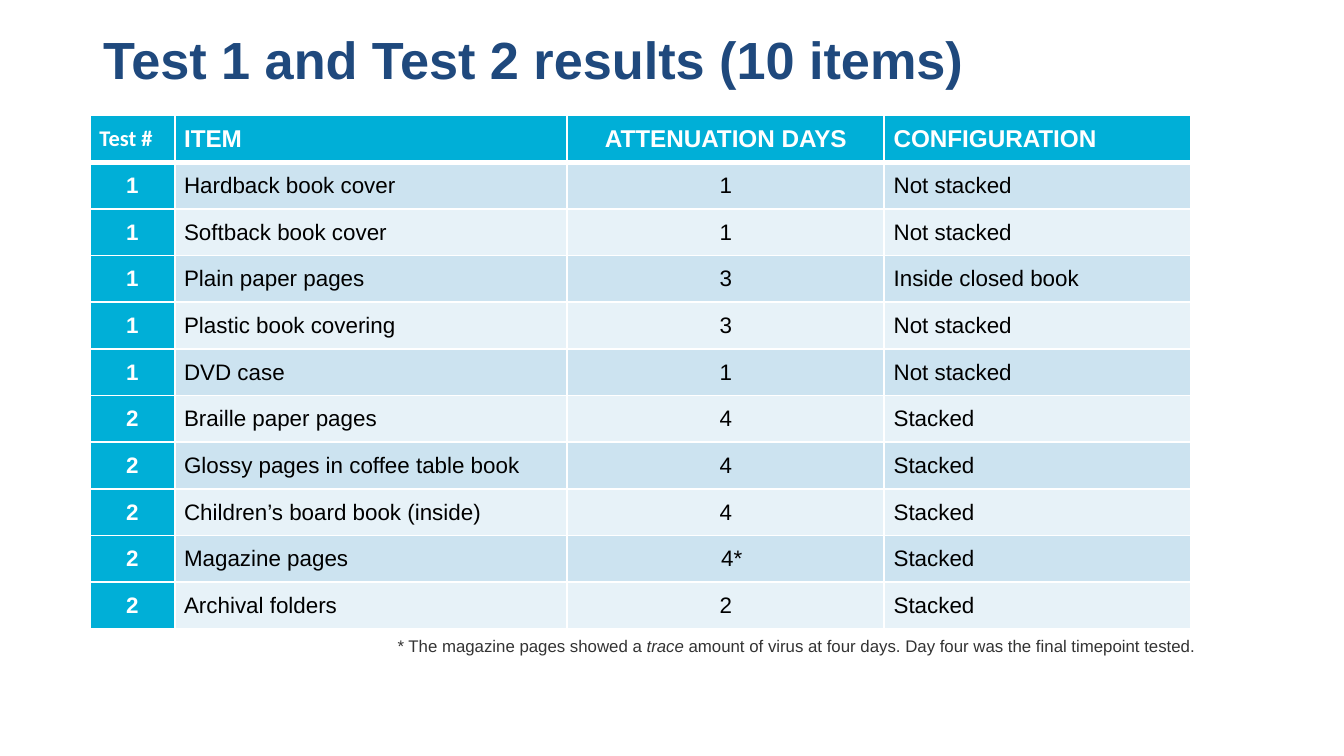
"""Build a slide with a table of virus attenuation results for ten library items."""
from lxml.etree import SubElement
from pptx import Presentation
from pptx.dml.color import RGBColor
from pptx.enum.text import MSO_ANCHOR, PP_ALIGN
from pptx.oxml.ns import qn
from pptx.util import Inches, Pt

NAVY = RGBColor(0x1F, 0x49, 0x7D)
CYAN = RGBColor(0x00, 0xAF, 0xD7)
BANDS = RGBColor(0xCC, 0xE3, 0xF0), RGBColor(0xE7, 0xF2, 0xF8)
WHITE = RGBColor(0xFF, 0xFF, 0xFF)
BLACK = RGBColor(0, 0, 0)
GRAY = RGBColor(0x33, 0x33, 0x33)

TITLE = "Test 1 and Test 2 results (10 items)"
HEADINGS = ("Test #", "ITEM", "ATTENUATION DAYS", "CONFIGURATION")
RESULTS = [
    ("1", "Hardback book cover", "1", "Not stacked"),
    ("1", "Softback book cover", "1", "Not stacked"),
    ("1", "Plain paper pages", "3", "Inside closed book"),
    ("1", "Plastic book covering", "3", "Not stacked"),
    ("1", "DVD case", "1", "Not stacked"),
    ("2", "Braille paper pages", "4", "Stacked"),
    ("2", "Glossy pages in coffee table book", "4", "Stacked"),
    ("2", "Children’s board book (inside)", "4", "Stacked"),
    ("2", "Magazine pages", "4*", "Stacked"),
    ("2", "Archival folders", "2", "Stacked"),
]
FOOTNOTE = [
    ("* The magazine pages showed a ", False),
    ("trace ", True),
    ("amount of virus at four days. Day four was the final timepoint tested.", False),
]
SLIDE_WIDTH = Inches(10)
SLIDE_HEIGHT = SLIDE_WIDTH * 9 // 16
COLUMN_WIDTHS = (0.63, 2.92, 2.36, 2.28)
LEFT, TABLE_TOP, TABLE_HEIGHT = 0.67, 0.86, 3.82
PADDING = 0.07
MARK_SHIFT = 0.09


def style(font, size, color, bold=False, italic=False, name="Arial"):
    font.name, font.size, font.bold, font.italic = name, Pt(size), bold, italic
    font.color.rgb = color


def add_text(slide, box, runs, size, color, bold=False):
    frame = slide.shapes.add_textbox(*map(Inches, box)).text_frame
    frame.word_wrap = True
    for text, italic in runs:
        run = frame.paragraphs[0].add_run()
        run.text = text
        style(run.font, size, color, bold, italic)


def add_borders(cell, bottom_width):
    properties = cell._tc.get_or_add_tcPr()
    widths = {"lnL": 1, "lnR": 1, "lnT": 1, "lnB": bottom_width}
    for position, (side, width) in enumerate(widths.items()):
        line = SubElement(properties, qn(f"a:{side}"), w=str(Pt(width)))
        fill = SubElement(line, qn("a:solidFill"))
        SubElement(fill, qn("a:srgbClr"), val=str(WHITE))
        properties.insert(position, line)


def fill_cell(cell, text, row, column):
    heading = row == 0
    accent = heading or column == 0
    centered = column == 2 or (column == 0 and not heading)
    shift = MARK_SHIFT if text.endswith("*") else 0
    cell.text_frame.text = text
    cell.vertical_anchor = MSO_ANCHOR.MIDDLE
    cell.margin_left, cell.margin_right = Inches(PADDING + shift), Inches(PADDING)
    cell.margin_top = cell.margin_bottom = 0
    cell.fill.solid()
    cell.fill.fore_color.rgb = CYAN if accent else BANDS[(row - 1) % 2]
    paragraph = cell.text_frame.paragraphs[0]
    paragraph.alignment = PP_ALIGN.CENTER if centered else PP_ALIGN.LEFT
    style(
        paragraph.runs[0].font,
        13 if heading and column else 12,
        WHITE if accent else BLACK,
        bold=accent,
        name="Calibri" if heading and column == 0 else "Arial",
    )
    add_borders(cell, 3 if heading else 1)


def add_results(slide):
    rows = [HEADINGS, *RESULTS]
    box = (LEFT, TABLE_TOP, sum(COLUMN_WIDTHS), TABLE_HEIGHT)
    table = slide.shapes.add_table(len(rows), len(HEADINGS), *map(Inches, box)).table
    for column, width in zip(table.columns, COLUMN_WIDTHS):
        column.width = Inches(width)
    for row, texts in enumerate(rows):
        for column, text in enumerate(texts):
            fill_cell(table.cell(row, column), text, row, column)


def main():
    deck = Presentation()
    deck.slide_width, deck.slide_height = SLIDE_WIDTH, SLIDE_HEIGHT
    slide = deck.slides.add_slide(deck.slide_layouts[6])
    add_results(slide)
    add_text(slide, (2.86, TABLE_TOP + TABLE_HEIGHT, 6.46, 0.25), FOOTNOTE, 9, GRAY)
    add_text(slide, (LEFT, 0.15, 9.23, 0.75), [(TITLE, False)], 28, NAVY, bold=True)
    deck.save("out.pptx")


if __name__ == "__main__":
    main()
